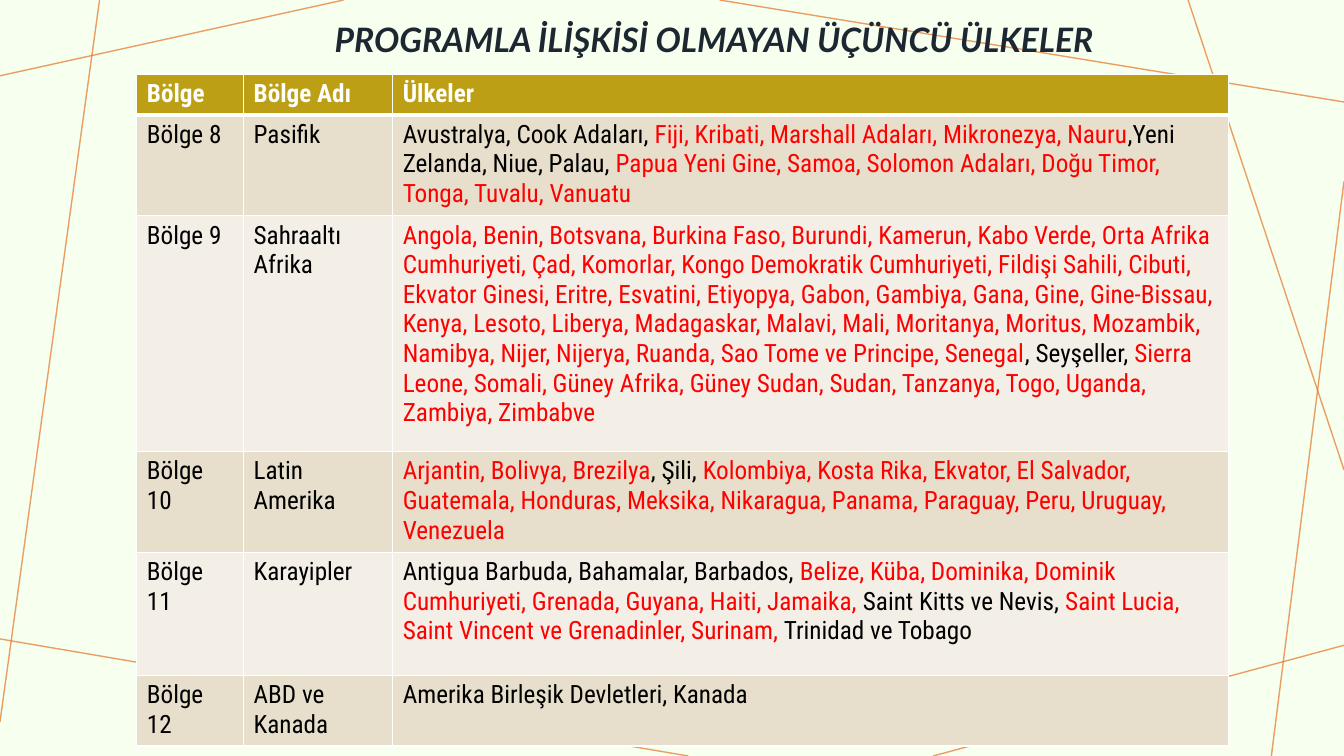
from lxml.etree import SubElement
from pptx import Presentation
from pptx.dml.color import RGBColor
from pptx.enum.shapes import MSO_CONNECTOR
from pptx.enum.text import MSO_ANCHOR, PP_ALIGN
from pptx.oxml.ns import qn
from pptx.util import Cm, Pt

MINT = RGBColor(0xF7, 0xFF, 0xEE)
ORANGE = RGBColor(0xE7, 0x76, 0x29)
NAVY = RGBColor(0x1C, 0x27, 0x32)
GOLD = RGBColor(0xBC, 0x9F, 0x14)
SAND = RGBColor(0xE7, 0xDF, 0xCC)
CREAM = RGBColor(0xF3, 0xEF, 0xE7)
WHITE = RGBColor(0xFF, 0xFF, 0xFF)
BLACK = RGBColor(0, 0, 0)
RED = RGBColor(0xFF, 0, 0)

SLIDE_W, SLIDE_H = 33.88, 19.05
TITLE = "PROGRAMLA İLİŞKİSİ OLMAYAN ÜÇÜNCÜ ÜLKELER"
HEADINGS = ("Bölge", "Bölge Adı", "Ülkeler")
COLUMN_WIDTHS = (2.69, 3.76, 21.06)
ROW_HEIGHTS = (0.97, 2.39, 5.94, 2.39, 3.1, 1.68)
BORDER, HEADING_BORDER = Pt(0.96), Pt(3)

RAYS = (
    (8.66, 0, 0, 1.91),
    (2.51, 0, 0, 18.19),
    (17.35, SLIDE_H, 0, 16.1),
    (SLIDE_W, 16.26, 23.52, SLIDE_H),
    (SLIDE_W, 4.57, 32.05, SLIDE_H),
    (SLIDE_W, 11.84, 29.95, 0),
    (SLIDE_W, 2.57, 18.14, 0),
)

REGIONS = (
    ("Bölge 8", "Pasifik", (
        ("Avustralya, Cook Adaları, ", BLACK),
        ("Fiji, Kribati, Marshall Adaları, Mikronezya, Nauru", RED),
        (",Yeni Zelanda, Niue, Palau, ", BLACK),
        ("Papua Yeni Gine, Samoa, Solomon Adaları, Doğu Timor, "
         "Tonga, Tuvalu, Vanuatu", RED),
    )),
    ("Bölge 9", "Sahraaltı Afrika", (
        ("Angola, Benin, Botsvana, Burkina Faso, Burundi, Kamerun, Kabo Verde, "
         "Orta Afrika Cumhuriyeti, Çad, Komorlar, Kongo Demokratik Cumhuriyeti, "
         "Fildişi Sahili, Cibuti, Ekvator Ginesi, Eritre, Esvatini, Etiyopya, "
         "Gabon, Gambiya, Gana, Gine, Gine-Bissau, Kenya, Lesoto, Liberya, "
         "Madagaskar, Malavi, Mali, Moritanya, Moritus, Mozambik, Namibya, "
         "Nijer, Nijerya, Ruanda, Sao Tome ve Principe, Senegal", RED),
        (", Seyşeller, ", BLACK),
        ("Sierra Leone, Somali, Güney Afrika, Güney Sudan, Sudan, Tanzanya, "
         "Togo, Uganda, Zambiya, Zimbabve", RED),
    )),
    ("Bölge 10", "Latin Amerika", (
        ("Arjantin, Bolivya, Brezilya", RED),
        (", Şili, ", BLACK),
        ("Kolombiya, Kosta Rika, Ekvator, El Salvador, Guatemala, Honduras, "
         "Meksika, Nikaragua, Panama, Paraguay, Peru, Uruguay, Venezuela", RED),
    )),
    ("Bölge 11", "Karayipler", (
        ("Antigua Barbuda, Bahamalar, Barbados, ", BLACK),
        ("Belize, Küba, Dominika, Dominik Cumhuriyeti, Grenada, Guyana, Haiti, "
         "Jamaika,", RED),
        (" Saint Kitts ve Nevis, ", BLACK),
        ("Saint Lucia, Saint Vincent ve Grenadinler, Surinam,", RED),
        (" Trinidad ve Tobago", BLACK),
    )),
    ("Bölge 12", "ABD ve Kanada", (
        ("Amerika Birleşik Devletleri, Kanada", BLACK),
    )),
)


def add_run(paragraph, text, font_name, size, color, bold=False, italic=False):
    run = paragraph.add_run()
    run.text = text
    font = run.font
    font.name, font.size = font_name, Pt(size)
    font.bold, font.italic = bold, italic
    font.color.rgb = color


def draw_background(slide, left, top):
    slide.background.fill.solid()
    slide.background.fill.fore_color.rgb = MINT
    for x1, y1, x2, y2 in RAYS:
        ray = slide.shapes.add_connector(
            MSO_CONNECTOR.STRAIGHT,
            Cm(left + x1), Cm(top + y1), Cm(left + x2), Cm(top + y2))
        ray.line.color.rgb = ORANGE
        ray.line.width = Pt(1)
        color = ray.line.fill._xPr.find(".//" + qn("a:srgbClr"))
        SubElement(color, qn("a:alpha"), val="70000")
        SubElement(ray._element.spPr, qn("a:effectLst"))


def draw_title(slide, left, top, width, height):
    title = slide.shapes.add_textbox(Cm(left), Cm(top), Cm(width), Cm(height))
    frame = title.text_frame
    frame.word_wrap = True
    frame.vertical_anchor = MSO_ANCHOR.MIDDLE
    paragraph = frame.paragraphs[0]
    paragraph.alignment = PP_ALIGN.CENTER
    paragraph.line_spacing = 0.9
    add_run(paragraph, TITLE, "Lato", 24, NAVY, bold=True, italic=True)


def set_borders(cell, top_width, bottom_width):
    properties = cell._tc.get_or_add_tcPr()
    widths = {"L": BORDER, "R": BORDER, "T": top_width, "B": bottom_width}
    for side, width in widths.items():
        border = SubElement(properties, qn("a:ln" + side), w=str(int(width)))
        fill = SubElement(border, qn("a:solidFill"))
        SubElement(fill, qn("a:srgbClr"), val=str(WHITE))


def draw_regions(slide, left, top):
    rows = [[[(heading, WHITE)] for heading in HEADINGS]]
    rows += [[[(region, BLACK)], [(name, BLACK)], countries]
             for region, name, countries in REGIONS]
    table = slide.shapes.add_table(
        len(rows), len(HEADINGS), Cm(left), Cm(top),
        Cm(sum(COLUMN_WIDTHS)), Cm(sum(ROW_HEIGHTS))).table
    for column, width in zip(table.columns, COLUMN_WIDTHS):
        column.width = Cm(width)
    for index, (row, height) in enumerate(zip(rows, ROW_HEIGHTS)):
        table.rows[index].height = Cm(height)
        is_heading = index == 0
        fill = GOLD if is_heading else SAND if index % 2 else CREAM
        for cell, parts in zip(table.rows[index].cells, row):
            set_borders(cell, HEADING_BORDER if index == 1 else BORDER,
                        HEADING_BORDER if is_heading else BORDER)
            cell.fill.solid()
            cell.fill.fore_color.rgb = fill
            paragraph = cell.text_frame.paragraphs[0]
            for text, color in parts:
                add_run(paragraph, text, "Roboto Condensed", 18, color,
                        bold=is_heading)


def main():
    deck = Presentation()
    deck.slide_width, deck.slide_height = Cm(SLIDE_W), Cm(SLIDE_H)
    slide = deck.slides.add_slide(deck.slide_layouts[6])
    draw_background(slide, 0, 0)
    draw_title(slide, 2.2, 0.28, 31.6, 1.52)
    draw_regions(slide, 3.45, 1.88)
    deck.save("out.pptx")


if __name__ == "__main__":
    main()
